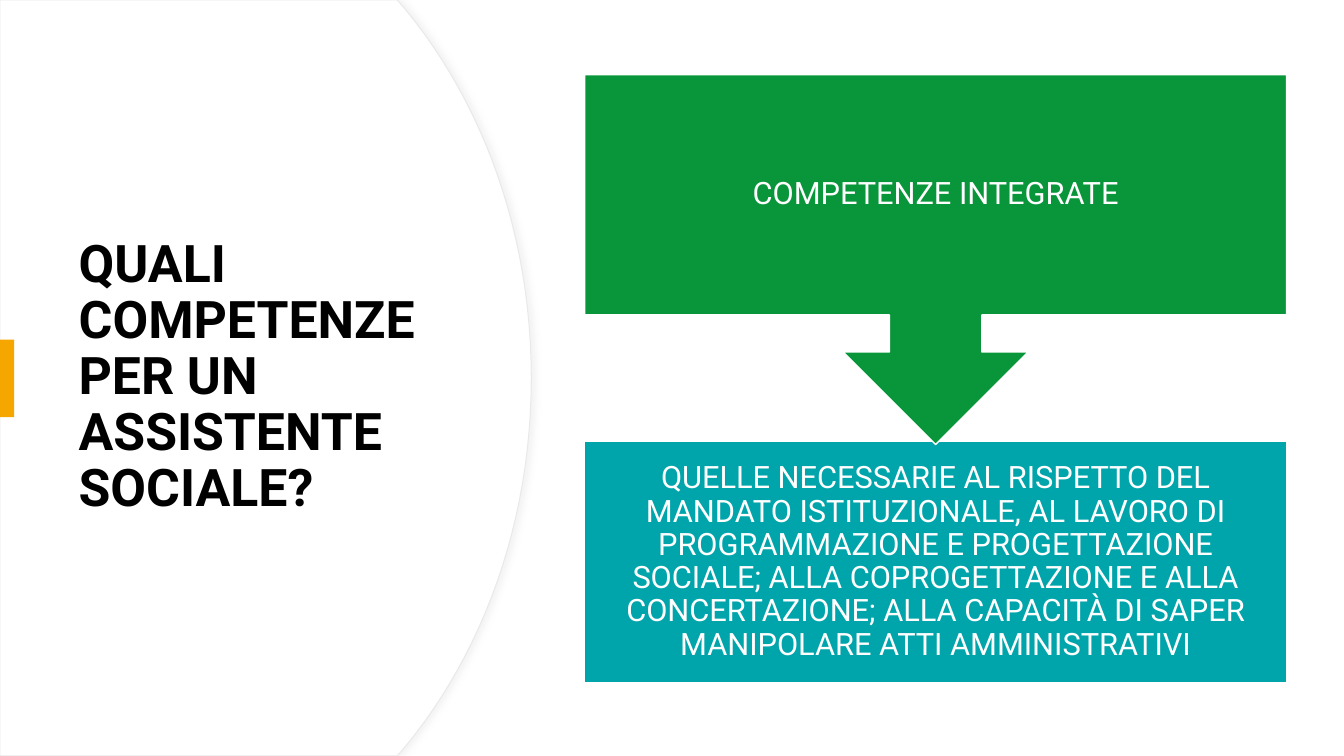
from lxml import etree
from pptx import Presentation
from pptx.dml.color import RGBColor
from pptx.enum.shapes import MSO_SHAPE as Shape
from pptx.enum.text import MSO_ANCHOR as Anchor, MSO_AUTO_SIZE as AutoSize, PP_ALIGN as Align
from pptx.oxml.ns import qn
from pptx.util import Pt

PX = 9144
WIDTH, HEIGHT = 1333, 750
COLORS = {
    "white": "FFFFFF", "black": "000000", "edge": "E9E9E9", "shadow": "D9D9D9",
    "accent": "F5A700", "green": "09963B", "teal": "00A5AB",
}


def paint(shape, fill, line=None, width=1):
    shape.shadow.inherit = False
    shape.fill.solid()
    shape.fill.fore_color.rgb = RGBColor.from_string(COLORS[fill])
    if line:
        shape.line.color.rgb = RGBColor.from_string(COLORS[line])
        shape.line.width = Pt(width)
    else:
        shape.line.fill.background()


def write(shape, text, size, color, align, bold=False):
    frame = shape.text_frame
    frame.word_wrap = True
    frame.auto_size = AutoSize.NONE
    frame.vertical_anchor = Anchor.MIDDLE
    frame.text = text
    paragraph = frame.paragraphs[0]
    paragraph.alignment = align
    paragraph.line_spacing = 0.9
    paragraph.font.name = "Roboto"
    paragraph.font.size = Pt(size)
    paragraph.font.bold = bold
    paragraph.font.color.rgb = RGBColor.from_string(COLORS[color])


prs = Presentation()
prs.slide_width, prs.slide_height = WIDTH * PX, HEIGHT * PX
slide = prs.slides.add_slide(prs.slide_layouts[5])
shapes = slide.shapes

STEPS = 24
upper_curve = [(401, 8), (479, 102), (527, 232), (527, 375)]
upper_arc = []
for step in range(STEPS + 1):
    t = step / STEPS
    weights = ((1 - t) ** 3, 3 * t * (1 - t) ** 2, 3 * t ** 2 * (1 - t), t ** 3)
    upper_arc.append(tuple(
        sum(weight * point[axis] for weight, point in zip(weights, upper_curve))
        for axis in (0, 1)
    ))
lower_arc = [(x, HEIGHT - y) for x, y in reversed(upper_arc[:-1])]
outline = [(394, 0), *upper_arc, *lower_arc, (394, HEIGHT), (0, HEIGHT)]
builder = shapes.build_freeform(0, 0)
builder.add_line_segments([(x * PX, y * PX) for x, y in outline])
panel = builder.convert_to_shape()
paint(panel, "white", "edge", 0.75)
effects = panel._element.spPr.find(qn("a:effectLst"))
shadow = etree.SubElement(effects, qn("a:outerShdw"), blurRad=str(Pt(4)), dist=str(Pt(3)), dir="0")
shadow_color = etree.SubElement(shadow, qn("a:srgbClr"), val=COLORS["shadow"])
etree.SubElement(shadow_color, qn("a:alpha"), val="30000")

title = shapes.title
title.left, title.top, title.width, title.height = 68 * PX, 127 * PX, 394 * PX, 495 * PX
write(title, "QUALI COMPETENZE PER UN ASSISTENTE SOCIALE?", 37, "black", Align.LEFT, True)
shapes._spTree.append(title._element)

marker = shapes.add_shape(Shape.RECTANGLE, 0, 337 * PX, 14 * PX, 77 * PX)
paint(marker, "accent")

steps = [
    (Shape.RECTANGLE, 438, 239, "teal",
     "QUELLE NECESSARIE AL RISPETTO DEL MANDATO ISTITUZIONALE, AL LAVORO DI "
     "PROGRAMMAZIONE E PROGETTAZIONE SOCIALE; ALLA COPROGETTAZIONE E ALLA "
     "CONCERTAZIONE; ALLA CAPACITÀ DI SAPER MANIPOLARE ATTI AMMINISTRATIVI"),
    (Shape.DOWN_ARROW_CALLOUT, 74, 367, "green", "COMPETENZE INTEGRATE"),
]
for kind, top, height, fill, text in steps:
    box = shapes.add_shape(kind, 580 * PX, top * PX, 696 * PX, height * PX)
    paint(box, fill, "white")
    write(box, text, 22, "white", Align.CENTER)
    frame = box.text_frame
    frame.margin_left = frame.margin_right = frame.margin_top = frame.margin_bottom = 17 * PX

prs.save("out.pptx")
